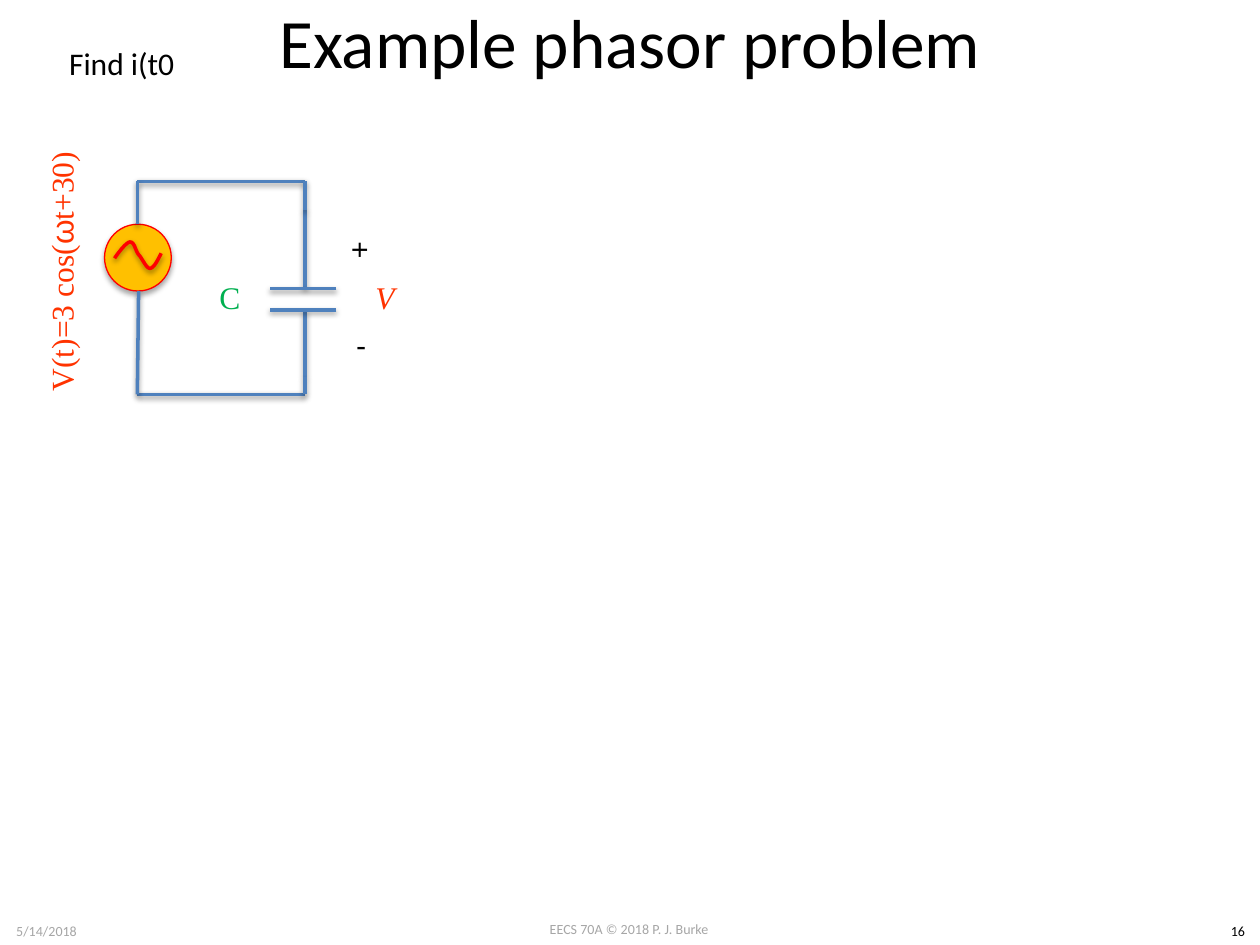
"""Build the phasor example slide: an AC source driving a capacitor."""
from dataclasses import dataclass
from typing import Any

import lxml.etree
import pptx
import pptx.dml.color
import pptx.enum.shapes
import pptx.enum.text
import pptx.oxml.ns
import pptx.util

BLACK = pptx.dml.color.RGBColor(0x00, 0x00, 0x00)
GRAY = pptx.dml.color.RGBColor(0xA6, 0xA6, 0xA6)
BLUE = pptx.dml.color.RGBColor(0x4F, 0x81, 0xBD)
GREEN = pptx.dml.color.RGBColor(0x00, 0xB0, 0x50)
ORANGE = pptx.dml.color.RGBColor(0xFF, 0x33, 0x00)
GOLD = pptx.dml.color.RGBColor(0xFF, 0xC0, 0x00)
RED = pptx.dml.color.RGBColor(0xFF, 0x00, 0x00)

SANS, SERIF, GREEK = "Calibri", "Times New Roman", "Arial"
LEFT, CENTER = pptx.enum.text.PP_ALIGN.LEFT, pptx.enum.text.PP_ALIGN.CENTER
TOP, MIDDLE = pptx.enum.text.MSO_ANCHOR.TOP, pptx.enum.text.MSO_ANCHOR.MIDDLE

WIDTH, HEIGHT = pptx.util.Inches(10), pptx.util.Inches(7.5)
COLUMNS, ROWS = 100, 75

SOURCE_COLUMN, CAPACITOR_COLUMN = 10.9, 24.2
TOP_ROW, BOTTOM_ROW = 14.4, 31.3
SOURCE_TOP, SOURCE_SIZE = 17.8, 5.3
PLATE_ROWS = (22.9, 24.6)
PLATE_COLUMNS = (21.4, 26.7)
LEAD_ROWS = (16.7, 29.9)


@dataclass(frozen=True)
class Box:
    """A rectangle in grid columns and rows."""
    column: float
    row: float
    columns: float
    rows: float

    def emu(self) -> tuple[int, int, int, int]:
        """Return left, top, width and height in EMU."""
        return x(self.column), y(self.row), x(self.columns), y(self.rows)


@dataclass(frozen=True)
class Wire:
    """A straight conductor between two grid points."""
    start: tuple[float, float]
    end: tuple[float, float]


def x(column: float) -> int:
    """Turn grid columns into EMU."""
    return round(WIDTH * column / COLUMNS)


def y(row: float) -> int:
    """Turn grid rows into EMU."""
    return round(HEIGHT * row / ROWS)


def add_text(slide: Any, box: Box, text: str, *, size: float = 18, font: str = SANS,
             color: Any = BLACK, italic: bool = False, align: Any = CENTER,
             anchor: Any = MIDDLE, wrap: bool = True, rotation: float = 0) -> None:
    """Add a line of text, setting any omega in the Greek font."""
    label = slide.shapes.add_textbox(*box.emu())
    label.rotation = rotation
    frame = label.text_frame
    frame.word_wrap = wrap
    frame.vertical_anchor = anchor
    paragraph = frame.paragraphs[0]
    paragraph.alignment = align
    before, omega, after = text.partition("ω")
    for part in filter(None, (before, omega, after)):
        run = paragraph.add_run()
        run.text = part
        run.font.size = pptx.util.Pt(size)
        run.font.name = GREEK if part == "ω" else font
        run.font.italic = italic
        run.font.color.rgb = color


def add_shadow(shape: Any, opacity: int = 38, distance: float = 1.6) -> None:
    """Give a shape a soft black shadow falling downwards."""
    qn = pptx.oxml.ns.qn
    effects = lxml.etree.SubElement(shape._element.spPr, qn("a:effectLst"))
    shadow = lxml.etree.SubElement(
        effects, qn("a:outerShdw"), blurRad=str(pptx.util.Pt(3.1)),
        dist=str(pptx.util.Pt(distance)), dir="5400000", rotWithShape="0")
    black = lxml.etree.SubElement(shadow, qn("a:srgbClr"), val=str(BLACK))
    lxml.etree.SubElement(black, qn("a:alpha"), val=str(opacity * 1000))


def set_line(shape: Any, color: Any, width: float) -> None:
    """Set the outline colour and width in points."""
    shape.line.color.rgb = color
    shape.line.width = pptx.util.Pt(width)


def add_wire(slide: Any, wire: Wire) -> None:
    """Draw one conductor."""
    conductor = slide.shapes.add_connector(
        pptx.enum.shapes.MSO_CONNECTOR.STRAIGHT,
        x(wire.start[0]), y(wire.start[1]), x(wire.end[0]), y(wire.end[1]))
    set_line(conductor, BLUE, 2)
    add_shadow(conductor)


def curve_points(knots: list[tuple[float, float]], steps: int = 12) -> list[tuple[int, int]]:
    """Sample a chain of cubic Bézier curves."""
    points = [(x(knots[0][0]), y(knots[0][1]))]
    for first in range(0, len(knots) - 1, 3):
        for step in range(1, steps + 1):
            t = step / steps
            weights = ((1 - t) ** 3, 3 * t * (1 - t) ** 2, 3 * t * t * (1 - t), t ** 3)
            column, row = (sum(w * knot[axis] for w, knot in zip(weights, knots[first:first + 4]))
                           for axis in (0, 1))
            points.append((x(column), y(row)))
    return points


def add_source(slide: Any) -> None:
    """Draw the AC source with its sine wave."""
    box = Box(8.3, SOURCE_TOP, SOURCE_SIZE, SOURCE_SIZE)
    source = slide.shapes.add_shape(pptx.enum.shapes.MSO_SHAPE.OVAL, *box.emu())
    source.fill.solid()
    source.fill.fore_color.rgb = GOLD
    set_line(source, RED, 0.75)
    add_shadow(source, opacity=35, distance=1.8)

    points = curve_points([(9.1, 20.5), (9.5, 19.9), (10, 19.3), (10.3, 19.2), (10.7, 19.2),
                           (10.7, 19.8), (11, 20.2), (11.3, 20.5), (11.6, 21.3), (11.9, 21.3),
                           (12.2, 21.3), (12.5, 20.7), (12.8, 20.1)])
    builder = slide.shapes.build_freeform(*points[0])
    builder.add_line_segments(points[1:], close=False)
    sine = builder.convert_to_shape()
    sine.fill.background()
    set_line(sine, RED, 2)
    add_shadow(sine)


def main() -> None:
    """Build and save the slide."""
    deck = pptx.Presentation()
    deck.slide_width, deck.slide_height = WIDTH, HEIGHT
    slide = deck.slides.add_slide(deck.slide_layouts[6])

    footer = {"size": 8, "anchor": TOP}
    add_text(slide, Box(38.3, 72.6, 23.3, 2.4), "EECS 70A © 2018 P. J. Burke", color=GRAY, **footer)
    add_text(slide, Box(0, 72.7, 7.4, 2.4), "5/14/2018", color=GRAY, **footer)
    add_text(slide, Box(96.5, 72.7, 3.5, 2.4), "16", **footer)
    add_text(slide, Box(5, 0, 90, 6.5), "Example phasor problem", size=39.6)

    note = {"align": LEFT, "anchor": TOP, "wrap": False}
    add_text(slide, Box(4.5, 3, 10.5, 4), "Find i(t0", **note)
    add_text(slide, Box(27.1, 17.9, 3.3, 4), "+", rotation=90, **note)
    add_text(slide, Box(27.3, 25.4, 2.8, 4), "-", **note)

    add_text(slide, Box(12.3, 19.9, 11.9, 7.3), "C", font=SERIF, color=GREEN)
    add_text(slide, Box(26.7, 20.5, 7.7, 6.1), "V", font=SERIF, color=ORANGE, italic=True)
    add_text(slide, Box(-5.7, 18.5, 21.1, 6.1), "V(t)=3 cos(ωt+30)",
             font=SERIF, color=ORANGE, rotation=270)

    rails = [Wire((SOURCE_COLUMN, row), (CAPACITOR_COLUMN, row)) for row in (TOP_ROW, BOTTOM_ROW)]
    plates = [Wire((PLATE_COLUMNS[1], row), (PLATE_COLUMNS[0], row)) for row in PLATE_ROWS]
    leads = [Wire((CAPACITOR_COLUMN, start), (CAPACITOR_COLUMN, end))
             for plate, joint, rail in zip(PLATE_ROWS, LEAD_ROWS, (TOP_ROW, BOTTOM_ROW))
             for start, end in ((plate, joint), (joint, rail))]
    source_leads = [Wire((SOURCE_COLUMN, BOTTOM_ROW), (11, SOURCE_TOP + SOURCE_SIZE)),
                    Wire((SOURCE_COLUMN, SOURCE_TOP), (SOURCE_COLUMN, TOP_ROW))]
    for wire in rails + leads + plates:
        add_wire(slide, wire)
    add_source(slide)
    for wire in source_leads:
        add_wire(slide, wire)

    deck.save("out.pptx")


if __name__ == "__main__":
    main()
